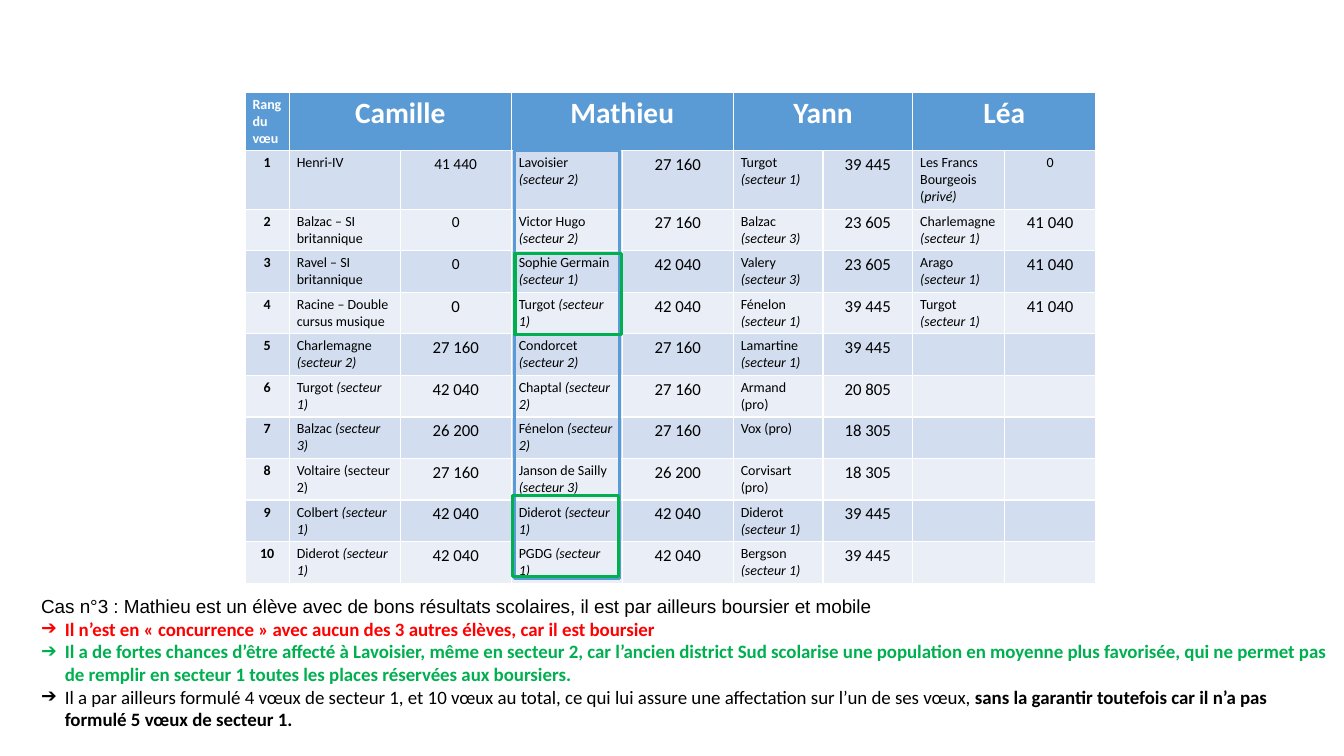
from lxml import etree
from pptx import Presentation
from pptx.dml.color import RGBColor
from pptx.enum.shapes import MSO_SHAPE
from pptx.enum.text import PP_ALIGN
from pptx.oxml.ns import qn
from pptx.util import Pt

CENTER, JUSTIFY = PP_ALIGN.CENTER, PP_ALIGN.JUSTIFY
RECTANGLE = MSO_SHAPE.RECTANGLE
BLUE, GREEN, RED = "5B9BD5", "00B050", "FF0000"
BLACK, WHITE = "000000", "FFFFFF"
BANDS = ("D2DEEF", "EAEFF7")

# Each wish is (school, score[, score size]); the part after "|" is italic.
WISHES = {
    "Camille": [
        ("Henri-IV", "41 440", 11),
        ("Balzac – SI britannique", "0", 11),
        ("Ravel – SI britannique", "0", 11),
        ("Racine – Double cursus musique", "0"),
        ("Charlemagne |(secteur 2)", "27 160"),
        ("Turgot |(secteur 1)", "42 040"),
        ("Balzac| (secteur 3)", "26 200"),
        ("Voltaire (secteur 2)", "27 160"),
        ("Colbert |(secteur 1)", "42 040"),
        ("Diderot |(secteur 1)", "42 040"),
    ],
    "Mathieu": [
        ("Lavoisier |(secteur 2)", "27 160"),
        ("Victor Hugo| (secteur 2)", "27 160"),
        ("Sophie Germain |(secteur 1)", "42 040"),
        ("Turgot |(secteur 1)", "42 040"),
        ("Condorcet |(secteur 2)", "27 160"),
        ("Chaptal |(secteur 2)", "27 160"),
        ("Fénelon |(secteur 2)", "27 160"),
        ("Janson de Sailly |(secteur 3)", "26 200"),
        ("Diderot |(secteur 1)", "42 040"),
        ("PGDG |(secteur 1)", "42 040"),
    ],
    "Yann": [
        ("Turgot |(secteur 1)", "39 445"),
        ("Balzac |(secteur 3)", "23 605"),
        ("Valery |(secteur 3)", "23 605"),
        ("Fénelon |(secteur 1)", "39 445"),
        ("Lamartine |(secteur 1)", "39 445"),
        ("Armand (pro)", "20 805"),
        ("Vox (pro)", "18 305"),
        ("Corvisart (pro)", "18 305"),
        ("Diderot |(secteur 1)", "39 445"),
        ("Bergson |(secteur 1)", "39 445"),
    ],
    "Léa": [
        ("Les Francs Bourgeois (|privé)", "0", 10),
        ("Charlemagne |(secteur 1)", "41 040"),
        ("Arago |(secteur 1)", "41 040"),
        ("Turgot |(secteur 1)", "41 040"),
    ],
}
CASE = ("Cas n°3 : Mathieu est un élève avec de bons résultats scolaires, "
        "il est par ailleurs boursier et mobile")
# Each bullet is a list of (text, colour, bold) runs.
BULLETS = [
    [("Il n’est en « concurrence » avec aucun des 3 autres élèves, car il est boursier", RED, True)],
    [("Il a de fortes chances d’être affecté à Lavoisier, même en secteur 2, car l’ancien district Sud "
      "scolarise une population en moyenne plus favorisée, qui ne permet pas de remplir en secteur 1 "
      "toutes les places réservées aux boursiers.", GREEN, True)],
    [("Il a par ailleurs formulé 4 vœux de secteur 1, et 10 vœux au total, ce qui lui assure une "
      "affectation sur l’un de ses vœux, ", BLACK, False),
     ("sans la garantir toutefois car il n’a pas formulé 5 vœux de secteur 1.", BLACK, True)],
]
RANKS = 10
TABLE_LEFT, TABLE_TOP = 175, 65.8
COLUMN_WIDTHS = [31.6] + [79.3] * 4 + [64.1] * 2 + [65.5] * 2
ROW_HEIGHTS = [41.8, 41.8] + [29.7] * (RANKS - 1)
# Frames around Mathieu's wishes: left, top, width, height, colour
COLUMN_FRAME = (367.2, 107.3, 75.6, 306, BLUE)
SECTOR_FRAMES = [(367.9, 181.4, 76.3, 57.6, GREEN), (365.8, 354.2, 76.3, 57.6, GREEN)]


def rgb(value):
    return RGBColor.from_string(value)


def add_run(paragraph, text, size, color=BLACK, bold=False, italic=False, font="Calibri"):
    run = paragraph.add_run()
    run.text = text
    run.font.name = font
    run.font.size = Pt(size)
    run.font.bold = bold
    run.font.italic = italic
    run.font.color.rgb = rgb(color)


def write_cell(cell, text, size, align=None, color=BLACK, bold=False):
    """Write text in a cell, with the part after "|" in italics."""
    paragraph = cell.text_frame.paragraphs[0]
    paragraph.alignment = align
    for index, part in enumerate(text.split("|")):
        add_run(paragraph, part, size, color, bold, italic=index == 1)


def add_wish_table(slide):
    frame = slide.shapes.add_table(
        len(ROW_HEIGHTS), len(COLUMN_WIDTHS), Pt(TABLE_LEFT), Pt(TABLE_TOP),
        Pt(sum(COLUMN_WIDTHS)), Pt(sum(ROW_HEIGHTS)))
    table = frame.table
    for column, width in zip(table.columns, COLUMN_WIDTHS):
        column.width = Pt(width)
    for number, (row, height) in enumerate(zip(table.rows, ROW_HEIGHTS)):
        row.height = Pt(height)
        for cell in row.cells:
            cell.fill.solid()
            cell.fill.fore_color.rgb = rgb(BANDS[(number - 1) % 2] if number else BLUE)
            cell.margin_left = cell.margin_right = Pt(5.4)
            cell.margin_top = cell.margin_bottom = Pt(2.7)

    corner = table.cell(0, 0).text_frame.paragraphs[0]
    add_run(corner, "Rang", 10, WHITE, True)
    corner.add_line_break()
    add_run(corner, "du vœu", 10, WHITE, True)
    for rank in range(1, RANKS + 1):
        write_cell(table.cell(rank, 0), str(rank), 10, CENTER, bold=True)

    for index, (student, wishes) in enumerate(WISHES.items()):
        column = 1 + 2 * index
        heading = table.cell(0, column)
        heading.merge(table.cell(0, column + 1))
        write_cell(heading, student, 21, CENTER, WHITE, True)
        for rank, (school, score, *size) in enumerate(wishes, start=1):
            write_cell(table.cell(rank, column), school, 10)
            write_cell(table.cell(rank, column + 1), score, size[0] if size else 12, CENTER)


def add_frame(slide, left, top, width, height, color):
    shape = slide.shapes.add_shape(RECTANGLE, Pt(left), Pt(top), Pt(width), Pt(height))
    shape.shadow.inherit = False
    shape.fill.background()
    shape.line.color.rgb = rgb(color)
    shape.line.width = Pt(2.25)


def add_arrow_bullet(paragraph):
    properties = paragraph._p.get_or_add_pPr()
    properties.set("marL", str(Pt(16.9)))
    properties.set("indent", str(-Pt(16.9)))
    etree.SubElement(properties, qn("a:buFont")).set("typeface", "Calibri")
    etree.SubElement(properties, qn("a:buChar")).set("char", "➔")


def add_case_text(slide):
    box = slide.shapes.add_textbox(Pt(22.3), Pt(421.2), Pt(934), Pt(105.1))
    text_frame = box.text_frame
    text_frame.word_wrap = True
    paragraph = text_frame.paragraphs[0]
    paragraph.alignment = JUSTIFY
    add_run(paragraph, CASE, 13.5, font="Arial")
    for runs in BULLETS:
        paragraph = text_frame.add_paragraph()
        add_arrow_bullet(paragraph)
        for text, color, bold in runs:
            add_run(paragraph, text, 13.5, color, bold)


def main():
    presentation = Presentation()
    presentation.slide_width, presentation.slide_height = Pt(960), Pt(540)
    slide = presentation.slides.add_slide(presentation.slide_layouts[6])
    add_wish_table(slide)
    add_frame(slide, *COLUMN_FRAME)
    for sector_frame in SECTOR_FRAMES:
        add_frame(slide, *sector_frame)
    add_case_text(slide)
    presentation.save("out.pptx")


if __name__ == "__main__":
    main()
